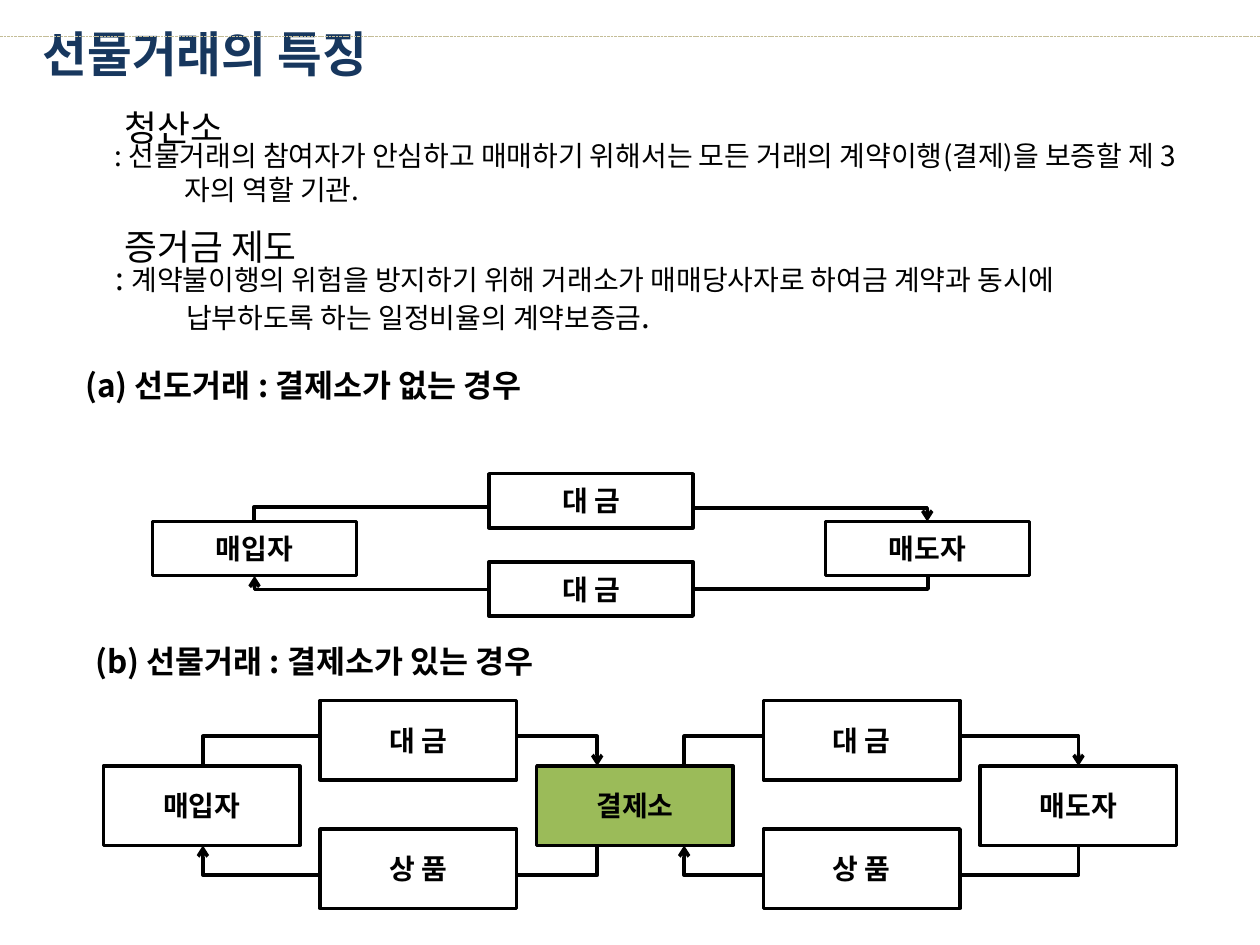
"""Build the slide on the features of futures trading."""
from lxml.etree import SubElement
from pptx import Presentation
from pptx.dml.color import RGBColor
from pptx.enum.dml import MSO_LINE
from pptx.enum.shapes import MSO_CONNECTOR, MSO_SHAPE
from pptx.enum.text import MSO_ANCHOR, PP_ALIGN
from pptx.oxml.ns import qn
from pptx.util import Inches, Pt

FACE = "Noto Sans CJK KR"
BLACK = "000000"
hue = RGBColor.from_string


def write(para, text, size, lead, bold=False, color=BLACK, left=0, hang=0):
    para.line_spacing = Pt(lead)
    props = para._p.get_or_add_pPr()
    props.set("marL", str(Inches(left)))
    props.set("indent", str(Inches(-hang)))
    run = para.add_run()
    run.text = text
    look = {"name": FACE, "size": Pt(size), "bold": bold}
    for key, value in look.items():
        setattr(run.font, key, value)
    run.font.color.rgb = hue(color)
    SubElement(run._r.get_or_add_rPr(), qn("a:ea"), typeface=FACE)


def join(kind, ends, color, width):
    line = slide.shapes.add_connector(kind, *[Inches(n) for n in ends])
    line.line.color.rgb = hue(color)
    line.line.width = Pt(width)
    SubElement(line.element.spPr, qn("a:effectLst"))
    return line


deck = Presentation()
deck.slide_width, deck.slide_height = Inches(10), Inches(7.5)
slide = deck.slides.add_slide(deck.slide_layouts[6])

# left, top, width, height, paragraphs of (space before, text, format)
item = {"size": 20.4, "lead": 24, "left": 0.65}
note = {"size": 16, "lead": 19.2, "left": 0.56, "hang": 0.56}
case = {"size": 18, "lead": 21.6, "bold": True, "left": 0.1, "hang": 0.1}
texts = [
    (0.24, 0.1, 9, 1.99, [
        (0, "선물거래의 특징", {"size": 27.8, "lead": 36, "bold": True, "color": "17375E"}),
        (14, "청산소", item),
        (44, "증거금 제도", item)]),
    (0.81, 1.05, 9, 0.64, [
        (0, ": 선물거래의 참여자가 안심하고 매매하기 위해서는 모든 거래의 "
            "계약이행(결제)을 보증할 제 3자의 역할 기관.", note)]),
    (0.82, 2.01, 8.66, 0.71, [
        (0, ": ", note | {"size": 18, "lead": 21.6})]),
    (0.58, 2.86, 7.77, 0.4, [(0, "(a) 선도거래 : 결제소가 없는 경우", case)]),
    (0.66, 5.05, 7.5, 0.4, [(0, "(b) 선물거래 : 결제소가 있는 경우", case)]),
]
frames = []
for *area, paras in texts:
    frame = slide.shapes.add_textbox(*[Inches(n) for n in area]).text_frame
    frame.word_wrap = True
    for num, (gap, text, form) in enumerate(paras):
        para = frame.add_paragraph() if num else frame.paragraphs[0]
        if gap:
            para.space_before = Pt(gap)
        write(para, text, **form)
    frames.append(frame)

margin = frames[2].paragraphs[0]
for text, size in [
    ("계약불이행의 위험을 방지하기 위해 거래소가 매매당사자로 하여금 계약과 동시에 "
     "납부하도록 하는 일정비율의 계약보증금", 16),
    (".", 18),
]:
    write(margin, text, **note | {"size": size, "lead": 21.6})

rule = join(MSO_CONNECTOR.STRAIGHT, (0, 0.29, 10, 0.29), "C4BD97", 0.5)
rule.line.dash_style = MSO_LINE.SQUARE_DOT

# left, top, width, height, turn, flipped, bends, arrow
links = [
    (2.02, 4.57, 1.86, 0.11, 180, False, 2, True),
    (5.5, 4.03, 1.86, 0.11, 0, False, 2, True),
    (2.89, 3.15, 0.11, 1.86, 90, True, 2, False),
    (6.38, 3.69, 0.11, 1.86, 90, False, 2, False),
]
for left in (3.17, 6.99):
    links += [(left, 5.14, 0.01, 3.13, 90, False, 3, True),
              (left, 4.52, 0.01, 3.13, 90, True, 3, True)]
for left, top, wide, high, turn, flip, bends, arrow in links:
    link = join(MSO_CONNECTOR.ELBOW, (left, top, left + wide, top + high), BLACK, 2)
    props = link.element.spPr
    frame = props.find(qn("a:xfrm"))
    frame.set("rot", str(turn * 60000))
    if flip:
        frame.set("flipH", "1")
        frame.set("flipV", "1")
    geom = props.find(qn("a:prstGeom"))
    geom.set("prst", f"bentConnector{bends}")
    if bends == 3:
        SubElement(geom.find(qn("a:avLst")), qn("a:gd"), name="adj1", fmla="val 2500000")
    if arrow:
        SubElement(props.find(qn("a:ln")), qn("a:tailEnd"), type="arrow")

small, large = (1.62, 0.43), (1.56, 0.63)
boxes = [
    ("대 금", 3.88, 3.76, small, None),
    ("매입자", 1.21, 4.14, small, None),
    ("매도자", 6.55, 4.14, small, None),
    ("대 금", 3.88, 4.46, small, None),
    ("매입자", 0.82, 6.08, large, None),
    ("결제소", 4.26, 6.08, large, "9BBB59"),
    ("매도자", 7.78, 6.08, large, None),
]
for left in (2.54, 6.06):
    boxes += [("대 금", left, 5.56, large, "FFFFFF"),
              ("상 품", left, 6.58, large, "FFFFFF")]
for text, left, top, size, color in boxes:
    area = [Inches(n) for n in (left, top, *size)]
    box = slide.shapes.add_shape(MSO_SHAPE.RECTANGLE, *area)
    box.shadow.inherit = False
    if color:
        box.fill.solid()
        box.fill.fore_color.rgb = hue(color)
    else:
        box.fill.background()
    box.line.color.rgb = hue(BLACK)
    box.line.width = Pt(2)
    box.text_frame.vertical_anchor = MSO_ANCHOR.MIDDLE
    para = box.text_frame.paragraphs[0]
    para.alignment = PP_ALIGN.CENTER
    write(para, text, 16, 19.2, bold=True)

deck.save("out.pptx")
